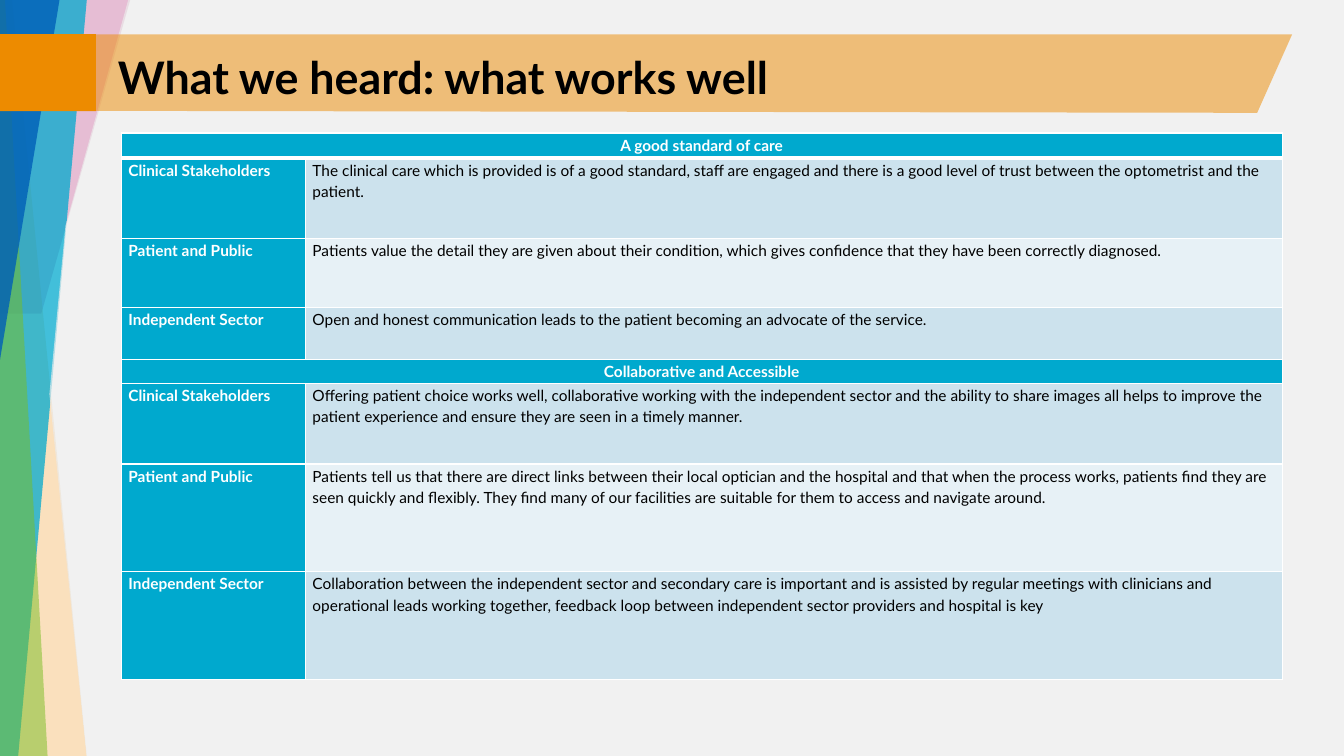
from lxml import etree
from pptx import Presentation
from pptx import util as u
from pptx.dml.color import RGBColor
from pptx.enum import shapes, text
from pptx.oxml.ns import qn

COLORS = {
    "white": "FFFFFF", "black": "000000", "pink": "AE2573", "orange": "ED8B00",
    "cyan": "00A9CE", "green": "78BE20", "blue": "005EB8", "grey": "EBEBEB",
    "band_dark": "CCE2ED", "band_light": "E7F1F6",
}

# Colour, opacity in percent, corners in points
RIBBONS = [
    ("pink", 30, [(29.5, 224), (0, 224), (0, 0), (93, 0)]),
    ("orange", 26, [(62, 540), (0, 540), (0, 0), (8.6, 0)]),
    ("cyan", 74, [(13, 540), (0, 540), (0, 0), (62, 0)]),
    ("green", 50, [(34, 540), (0, 540), (0, 0), (3.6, 0)]),
]
PAGE_PANEL = [(960, 540), (960, 0), (92, -1.5), (46.8, 161.3), (35.3, 281.5), (62, 542)]
TITLE_BANNER = [(67, 24.5), (923, 24.5), (898, 80.6), (67, 79.2)]

# Each section: heading, then (group, finding) rows
SECTIONS = [
    ("A good standard of care", [
        ("Clinical Stakeholders",
         "The clinical care which is provided is of a good standard, staff are engaged and there is "
         "a good level of trust between the optometrist and the patient."),
        ("Patient and Public",
         "Patients value the detail they are given about their condition, which gives confidence "
         "that they have been correctly diagnosed."),
        ("Independent Sector",
         "Open and honest communication leads to the patient becoming an advocate of the service."),
    ]),
    ("Collaborative and Accessible", [
        ("Clinical Stakeholders",
         "Offering patient choice works well, collaborative working with the independent sector and "
         "the ability to share images all helps to improve the patient experience and ensure they "
         "are seen in a timely manner."),
        ("Patient and Public",
         "Patients tell us that there are direct links between their local optician and the hospital "
         "and that when the process works, patients find they are seen quickly and flexibly. They "
         "find many of our facilities are suitable for them to access and navigate around."),
        ("Independent Sector",
         "Collaboration between the independent sector and secondary care is important and is "
         "assisted by regular meetings with clinicians and operational leads working together, "
         "feedback loop between independent sector providers and hospital is key"),
    ]),
]
COLUMN_WIDTHS = [131.5, 698]
ROW_HEIGHTS = [18, 57.5, 49, 37.5, 17, 57.5, 77, 77]


class SlideBuilder:
    font_name = "Lato"

    def __init__(self, slide):
        self.slide = slide

    def color(self, name):
        return RGBColor.from_string(COLORS[name])

    def paint(self, shape, color, opacity=100):
        shape.shadow.inherit = False
        shape.line.fill.background()
        shape.fill.solid()
        shape.fill.fore_color.rgb = self.color(color)
        if opacity < 100:
            solid = shape._element.spPr.find(qn("a:solidFill"))
            etree.SubElement(solid[0], qn("a:alpha"), val=str(opacity * 1000))

    def polygon(self, color, opacity, corners):
        points = [(u.Pt(x), u.Pt(y)) for x, y in corners]
        builder = self.slide.shapes.build_freeform(*points[0])
        builder.add_line_segments(points[1:], close=True)
        self.paint(builder.convert_to_shape(), color, opacity)

    def preset(self, kind, box, color, opacity=100, adjustment=0, rotation=0):
        shape = self.slide.shapes.add_shape(kind, *[u.Pt(value) for value in box])
        shape.adjustments[0] = adjustment
        shape.rotation = rotation
        self.paint(shape, color, opacity)

    def add_run(self, paragraph, words, size, color, bold):
        run = paragraph.add_run()
        run.text = words
        run.font.name = self.font_name
        run.font.size = u.Pt(size)
        run.font.bold = bold
        run.font.color.rgb = self.color(color)

    def title(self, words, box):
        title = self.slide.shapes.title
        title.left, title.top, title.width, title.height = [u.Pt(value) for value in box]
        frame = title.text_frame
        frame.auto_size = text.MSO_AUTO_SIZE.NONE
        frame.vertical_anchor = text.MSO_ANCHOR.MIDDLE
        frame.margin_left = frame.margin_right = u.Pt(7.2)
        frame.margin_top, frame.margin_bottom = u.Pt(8.6), u.Pt(3.6)
        paragraph = frame.paragraphs[0]
        paragraph.alignment = text.PP_ALIGN.LEFT
        self.add_run(paragraph, words, 32, "black", True)
        self.slide.shapes._spTree.append(title._element)  # in front of the banner

    def cell(self, cell, words, fill, color="white", bold=True, centered=False, bottom=1):
        """Fill one table cell; bottom is the width of its lower border."""
        properties = cell._tc.get_or_add_tcPr()
        for side, width in zip("LRTB", (1, 1, 1, bottom)):
            line = etree.SubElement(properties, qn("a:ln" + side), w=str(u.Pt(width)))
            solid = etree.SubElement(line, qn("a:solidFill"))
            etree.SubElement(solid, qn("a:srgbClr"), val=COLORS["white"])
        cell.fill.solid()
        cell.fill.fore_color.rgb = self.color(fill)
        cell.margin_left = cell.margin_right = u.Pt(5.2)
        cell.margin_top = cell.margin_bottom = 0
        if words:
            paragraph = cell.text_frame.paragraphs[0]
            paragraph.line_spacing = 1.15
            paragraph.alignment = text.PP_ALIGN.CENTER if centered else text.PP_ALIGN.LEFT
            self.add_run(paragraph, words, 11, color, bold)

    def findings_table(self, left, top):
        frame = self.slide.shapes.add_table(
            len(ROW_HEIGHTS), len(COLUMN_WIDTHS), u.Pt(left), u.Pt(top),
            u.Pt(sum(COLUMN_WIDTHS)), u.Pt(sum(ROW_HEIGHTS)))
        table = frame.table
        table.first_row = table.horz_banding = False
        for column, width in zip(table.columns, COLUMN_WIDTHS):
            column.width = u.Pt(width)
        for row, height in zip(table.rows, ROW_HEIGHTS):
            row.height = u.Pt(height)
        row_index = 0
        for heading, findings in SECTIONS:
            bottom = 3 if row_index == 0 else 1
            heading_cell, covered_cell = table.cell(row_index, 0), table.cell(row_index, 1)
            heading_cell.merge(covered_cell)
            self.cell(heading_cell, heading, "cyan", centered=True, bottom=bottom)
            self.cell(covered_cell, "", "cyan", bottom=bottom)
            for position, (group, finding) in enumerate(findings):
                row_index += 1
                band = "band_light" if position % 2 else "band_dark"
                self.cell(table.cell(row_index, 0), group, "cyan")
                self.cell(table.cell(row_index, 1), finding, band, "black", bold=False)
            row_index += 1


def main():
    presentation = Presentation()
    presentation.slide_width, presentation.slide_height = u.Pt(960), u.Pt(540)
    slide = presentation.slides.add_slide(presentation.slide_layouts[5])
    builder = SlideBuilder(slide)
    for color, opacity, corners in RIBBONS:
        builder.polygon(color, opacity, corners)
    builder.preset(shapes.MSO_SHAPE.ISOSCELES_TRIANGLE, (0, 0, 42.5, 257), "blue",
                   opacity=80, adjustment=1, rotation=180)
    builder.polygon("grey", 69, PAGE_PANEL)
    builder.polygon("orange", 50, TITLE_BANNER)
    builder.preset(shapes.MSO_SHAPE.PENTAGON, (0, 24.5, 68.5, 55), "orange")
    builder.findings_table(86.5, 95)
    builder.title("What we heard: what works well", (77, 25, 829.5, 54))
    presentation.save("out.pptx")


if __name__ == "__main__":
    main()
